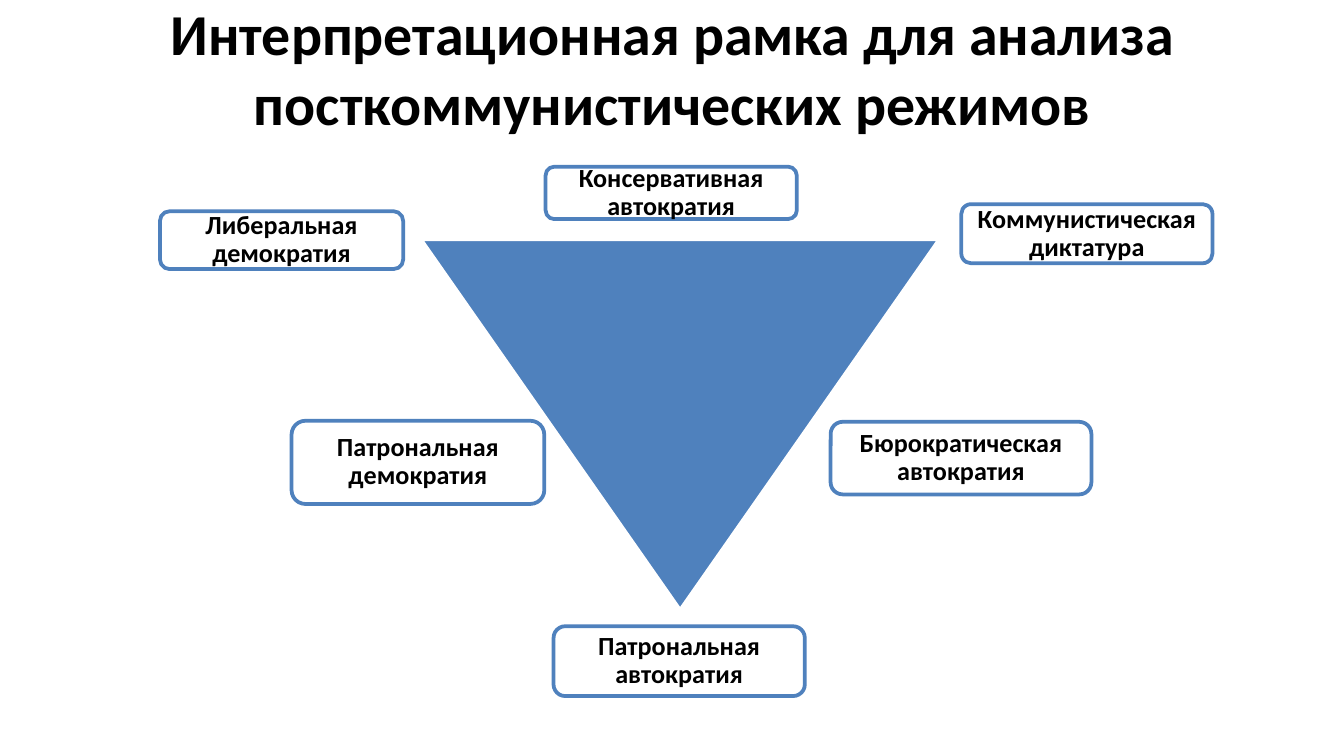
from dataclasses import dataclass

from lxml.etree import SubElement
from pptx import Presentation
from pptx.dml.color import RGBColor
from pptx.enum.shapes import MSO_SHAPE
from pptx.enum.text import MSO_ANCHOR, PP_ALIGN
from pptx.oxml.ns import qn
from pptx.shapes.autoshape import Shape
from pptx.slide import Slide
from pptx.util import Pt

WHITE = RGBColor(0xFF, 0xFF, 0xFF)
BLACK = RGBColor(0x00, 0x00, 0x00)
BLUE = RGBColor(0x4F, 0x81, 0xBD)
FONT = "Calibri"
SLIDE_WIDTH, SLIDE_HEIGHT = 720, 405
TITLE = "Интерпретационная рамка для анализа посткоммунистических режимов"


@dataclass(frozen=True)
class Regime:
    name: str
    left: float
    top: float
    width: float
    height: float


REGIMES = [
    Regime("Коммунистическая диктатура", 515, 109.4, 134.6, 31.7),
    Regime("Либеральная демократия", 85.7, 113.2, 130.3, 31),
    Regime("Патрональная aвтократия", 296.6, 335.5, 134.6, 37.4),
    Regime("Консервативная автократия", 292.3, 89.3, 134.6, 28.1),
    Regime("Бюрократическая aвтократия", 445, 226, 139.7, 38.9),
    Regime("Патрональная дeмократия", 156.2, 225.4, 135.4, 44.6),
]


def write(shape: Shape, text: str, size: float, inset: float, spacing: float) -> None:
    """Put centred bold text into a shape."""
    frame = shape.text_frame
    frame.word_wrap = True
    frame.vertical_anchor = MSO_ANCHOR.MIDDLE
    frame.margin_left = frame.margin_right = Pt(inset)
    frame.margin_top = frame.margin_bottom = Pt(inset)
    paragraph = frame.paragraphs[0]
    paragraph.text = text
    paragraph.alignment = PP_ALIGN.CENTER
    paragraph.line_spacing = spacing
    paragraph.font.name = FONT
    paragraph.font.size = Pt(size)
    paragraph.font.bold = True
    paragraph.font.color.rgb = BLACK


def paint(shape: Shape, fill: RGBColor, outline: RGBColor) -> None:
    shape.shadow.inherit = False
    shape.fill.solid()
    shape.fill.fore_color.rgb = fill
    shape.line.color.rgb = outline
    shape.line.width = Pt(2)


def set_fill_opacity(shape: Shape, percent: int) -> None:
    color = shape._element.spPr.find(qn("a:solidFill"))[0]
    SubElement(color, qn("a:alpha")).set("val", str(percent * 1000))


def add_title(slide: Slide) -> None:
    title = slide.shapes.add_textbox(Pt(0), Pt(0), Pt(SLIDE_WIDTH), Pt(72))
    write(title, TITLE, size=31, inset=5, spacing=1)


def add_triangle(slide: Slide) -> None:
    triangle = slide.shapes.add_shape(
        MSO_SHAPE.ISOSCELES_TRIANGLE, Pt(225.4), Pt(128.2), Pt(277.9), Pt(198.7)
    )
    triangle.rotation = 180
    paint(triangle, BLUE, WHITE)


def add_regime(slide: Slide, regime: Regime) -> None:
    box = slide.shapes.add_shape(
        MSO_SHAPE.ROUNDED_RECTANGLE,
        Pt(regime.left), Pt(regime.top), Pt(regime.width), Pt(regime.height),
    )
    paint(box, WHITE, BLUE)
    set_fill_opacity(box, 90)
    write(box, regime.name, size=14, inset=4.2, spacing=0.9)


def main() -> None:
    presentation = Presentation()
    presentation.slide_width = Pt(SLIDE_WIDTH)
    presentation.slide_height = Pt(SLIDE_HEIGHT)
    slide = presentation.slides.add_slide(presentation.slide_layouts[6])
    add_title(slide)
    add_triangle(slide)
    for regime in REGIMES:
        add_regime(slide, regime)
    presentation.save("out.pptx")


if __name__ == "__main__":
    main()
